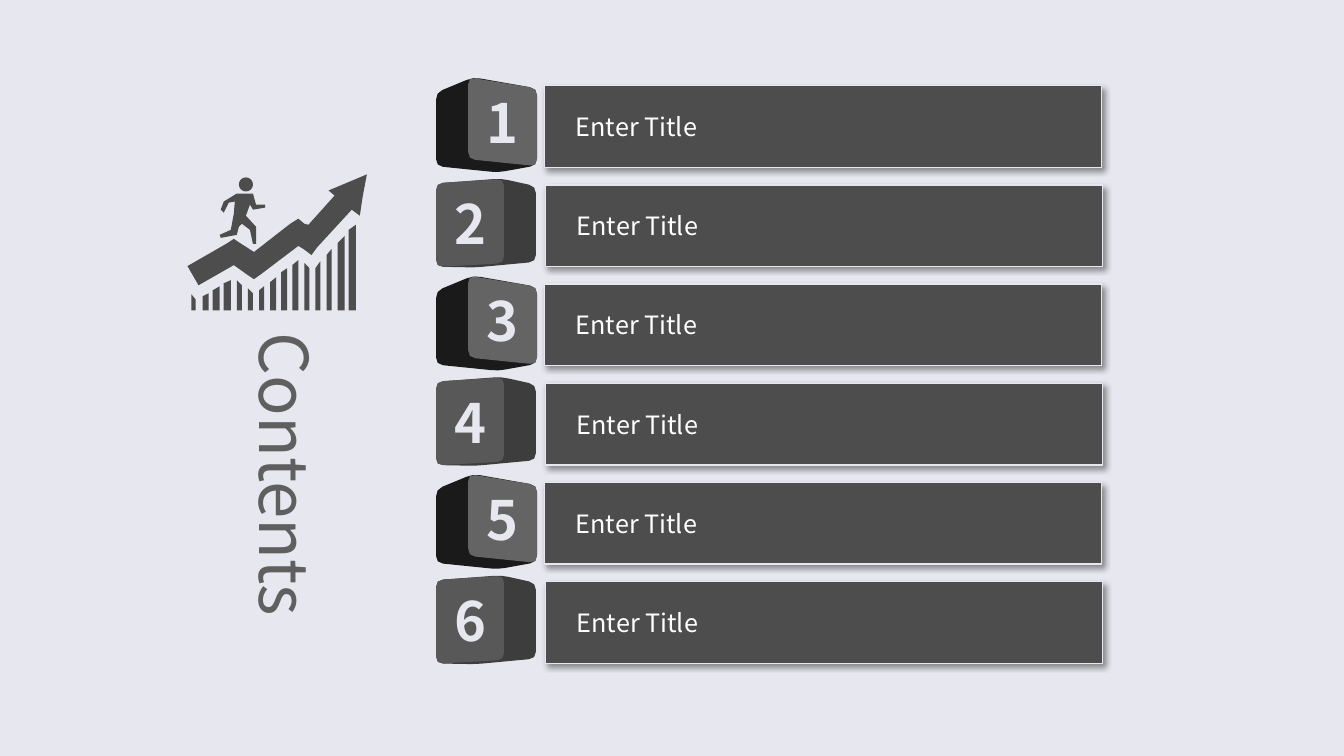
"""Build a contents slide with six numbered cubes, title bars and a growth icon."""
import math
import pptx
import pptx.util
import pptx.dml.color
import pptx.enum.shapes
import pptx.enum.text
import lxml.etree

Pt = pptx.util.Pt
RGB = pptx.dml.color.RGBColor
PALE = RGB(0xE7, 0xE7, 0xEF)
DARK = RGB(0x4D, 0x4D, 0x4D)
GREY = RGB(0x5F, 0x5F, 0x5F)
WHITE = RGB(0xFF, 0xFF, 0xFF)
FONT = "Noto Sans CJK JP"
NS = "http://schemas.openxmlformats.org/drawingml/2006/main"

HEAD = "Contents"
ITEMS = ["Enter Title"] * 6
TOP, STEP = 61.2, 70.85

CUBES = [
    {"bar": 388.8, "parts": [
        (RGB(0x1A, 0x1A, 0x1A), [(311.5, 5), (338, -6), (383.6, 2), (383.6, 57), (355.7, 62), (311.5, 57.5)]),
        (RGB(0x64, 0x64, 0x64), [(334.5, -6), (383.6, 2), (383.6, 57.5), (334.5, 52.5)])]},
    {"bar": 389.5, "parts": [
        (RGB(0x3D, 0x3D, 0x3D), [(311.5, -1), (358, -4.5), (382.8, 1), (382.8, 55), (340, 59), (311.5, 58.5)]),
        (RGB(0x58, 0x58, 0x58), [(311.5, -1.2), (360, -4.2), (360, 56), (311.5, 58.7)])]},
]

# Icon units are 0.72 points: left, right, top left, top right of each column.
UNIT, BASE = 0.72, 308
COLS = [
    (190, 194, 292, 297), (201, 207, 294, 291), (211, 218, 288, 284),
    (222, 229, 281, 278), (235, 240, 278, 283), (246, 251, 286, 291),
    (257, 262, 288, 284), (268, 274, 280, 275), (279, 285, 270, 266),
    (290, 296, 263, 258), (302, 307, 261, 266), (313, 318, 266, 259),
    (324, 329, 253, 247), (335, 342, 241, 234), (346, 353, 228, 223),
]
ARROW = [
    (186, 264), (197, 283), (232, 263), (246, 273), (252, 277), (259, 272),
    (296, 244), (301, 247), (309, 253), (315, 245), (349, 208), (357, 214),
    (360, 194), (364, 173), (345, 181), (326, 189), (332, 194), (306, 223),
    (302, 222), (296, 217), (288, 222), (252, 250), (238, 241), (232, 237),
    (226, 241),
]
RUNNER = [
    (219, 208), (222, 200), (235, 192), (251, 192), (254, 203), (263, 203),
    (263, 206), (251, 208), (248, 203), (244, 214), (254, 225), (254, 242),
    (251, 242), (248, 228), (240, 222), (237, 225), (235, 233), (219, 236),
    (218, 233), (229, 228), (232, 212), (233, 200), (227, 201), (222, 211),
]
FACE = (244, 183, 7)


def style(frame, size, color, bold=False):
    for run in frame.paragraphs[0].runs:
        run.font.name = FONT
        run.font.size = Pt(size)
        run.font.bold = bold
        run.font.color.rgb = color


def draw(slide, polys, color):
    pen = None
    for poly in polys:
        pts = [(Pt(x), Pt(y)) for x, y in poly]
        if pen is None:
            pen = slide.shapes.build_freeform(*pts[0], scale=1.0)
        else:
            pen.move_to(*pts[0])
        pen.add_line_segments(pts[1:], close=True)
    shape = pen.convert_to_shape()
    shape.shadow.inherit = False
    shape.fill.solid()
    shape.fill.fore_color.rgb = color
    shape.line.fill.background()
    return shape


def soften(poly, size=5):
    out = []
    for k, (x, y) in enumerate(poly):
        ends = []
        for u, v in (poly[k - 1], poly[(k + 1) % len(poly)]):
            part = size / math.dist((x, y), (u, v))
            ends.append((x + (u - x) * part, y + (v - y) * part))
        (ax, ay), (bx, by) = ends
        out += [ends[0], ((ax + 2 * x + bx) / 4, (ay + 2 * y + by) / 4), ends[1]]
    return out


def shade(shape):
    sub = lxml.etree.SubElement
    props = shape.fill._xPr
    glow = sub(sub(props, f"{{{NS}}}effectLst"), f"{{{NS}}}outerShdw",
               blurRad=str(Pt(4)), dist=str(Pt(3)), dir="2700000", algn="tl", rotWithShape="0")
    tint = sub(glow, f"{{{NS}}}srgbClr", val="000000")
    sub(tint, f"{{{NS}}}alpha", val="40000")


def add_bar(slide, left, top, text):
    bar = slide.shapes.add_shape(pptx.enum.shapes.MSO_SHAPE.RECTANGLE,
                                 Pt(left), Pt(top), Pt(398.2), Pt(58.3))
    bar.fill.solid()
    bar.fill.fore_color.rgb = DARK
    bar.line.color.rgb = PALE
    bar.line.width = Pt(1)
    shade(bar)
    frame = bar.text_frame
    frame.text = text
    frame.margin_left = frame.margin_right = Pt(22.5)
    frame.vertical_anchor = pptx.enum.text.MSO_ANCHOR.MIDDLE
    frame.paragraphs[0].alignment = pptx.enum.text.PP_ALIGN.LEFT
    style(frame, 18, WHITE)


def add_cube(slide, parts, top, label):
    for color, poly in parts:
        face = draw(slide, [soften([(x, y + top) for x, y in poly])], color)
    frame = face.text_frame
    frame.text = label
    frame.word_wrap = False
    frame.margin_left = frame.margin_right = frame.margin_top = frame.margin_bottom = 0
    frame.vertical_anchor = pptx.enum.text.MSO_ANCHOR.MIDDLE
    frame.paragraphs[0].alignment = pptx.enum.text.PP_ALIGN.CENTER
    style(frame, 38.7, PALE, True)


def add_icon(slide):
    cx, cy, rad = FACE
    turns = [math.tau * n / 16 for n in range(16)]
    polys = [[(cx + rad * math.cos(t), cy + rad * math.sin(t)) for t in turns], ARROW, RUNNER]
    polys += [[(l, a), (r, b), (r, BASE), (l, BASE)] for l, r, a, b in COLS]
    draw(slide, [[(x * UNIT, y * UNIT) for x, y in poly] for poly in polys], DARK)


def add_head(slide):
    head = slide.shapes.title
    head.left, head.top, head.width, head.height = Pt(96.5), Pt(303.1), Pt(213.1), Pt(67.7)
    head.rotation = 90
    frame = head.text_frame
    frame.text = HEAD
    frame.word_wrap = False
    frame.margin_right = 0
    frame.auto_size = pptx.enum.text.MSO_AUTO_SIZE.NONE
    frame.vertical_anchor = pptx.enum.text.MSO_ANCHOR.TOP
    frame.paragraphs[0].alignment = pptx.enum.text.PP_ALIGN.LEFT
    style(frame, 48, GREY)


def main():
    deck = pptx.Presentation()
    deck.slide_width, deck.slide_height = Pt(960), Pt(540)
    slide = deck.slides.add_slide(deck.slide_layouts[5])
    slide.background.fill.solid()
    slide.background.fill.fore_color.rgb = PALE
    add_head(slide)
    add_icon(slide)
    for k, text in enumerate(ITEMS):
        cube, top = CUBES[k % 2], TOP + k * STEP
        add_bar(slide, cube["bar"], top, text)
        add_cube(slide, cube["parts"], top, str(k + 1))
    deck.save("out.pptx")


if __name__ == "__main__":
    main()
